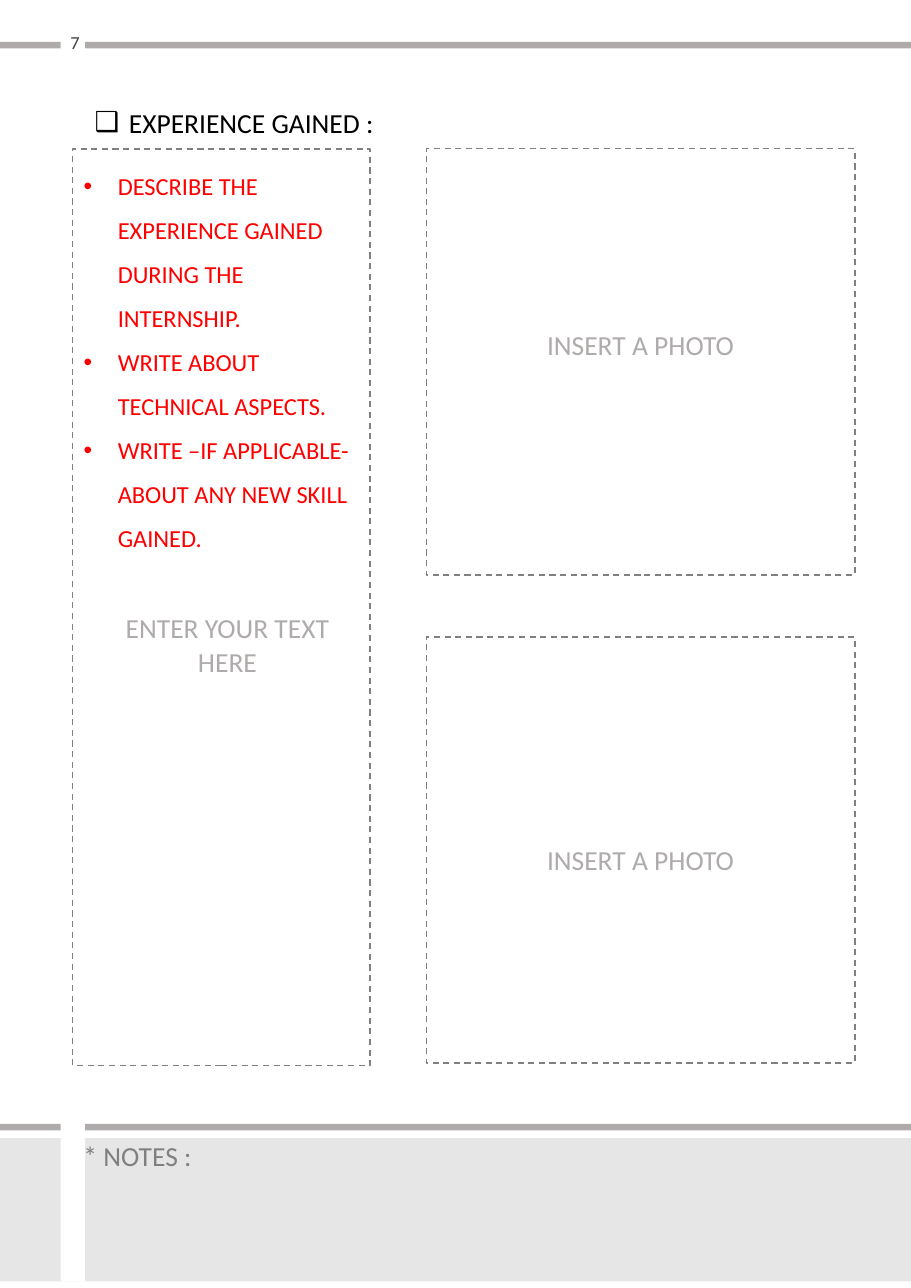
from lxml import etree
from pptx import Presentation
from pptx import util as u
from pptx.dml.color import RGBColor
from pptx.enum import dml, shapes, text
from pptx.oxml import ns

GREY, PALE, DASH = "AFABAB", "E7E6E6", "808080"
PAGE_WIDTH, PAGE_HEIGHT = 8.27, 11.69
INDENT = 0.31


def colour(value):
    return RGBColor.from_string(value)


def place(shape, box):
    for side, length in zip(("left", "top", "width", "height"), box):
        setattr(shape, side, u.Inches(length))


def add_bullet(paragraph, mark):
    properties = paragraph._p.get_or_add_pPr()
    properties.set("marL", str(u.Inches(INDENT)))
    properties.set("indent", str(-u.Inches(INDENT)))
    etree.SubElement(properties, ns.qn("a:buFont")).set("typeface", "Arial")
    etree.SubElement(properties, ns.qn("a:buChar")).set("char", mark)


def write(shape, lines, size, ink, align=text.PP_ALIGN.LEFT, mark=None, spacing=1.0):
    frame = shape.text_frame
    frame_format = {
        "word_wrap": True,
        "auto_size": text.MSO_AUTO_SIZE.SHAPE_TO_FIT_TEXT,
        "vertical_anchor": text.MSO_ANCHOR.TOP,
    }
    paragraph_format = {
        "alignment": align,
        "line_spacing": spacing,
        "space_before": u.Pt(0),
        "space_after": u.Pt(0),
    }
    font_format = {"name": "Calibri", "size": u.Pt(size), "bold": False}
    for name, value in frame_format.items():
        setattr(frame, name, value)
    for index, line in enumerate(lines):
        paragraph = frame.add_paragraph() if index else frame.paragraphs[0]
        if mark:
            add_bullet(paragraph, mark)
        for name, value in paragraph_format.items():
            setattr(paragraph, name, value)
        run = paragraph.add_run()
        run.text = line
        for name, value in font_format.items():
            setattr(run.font, name, value)
        run.font.color.rgb = colour(ink)


def add_label(slide, box, words, size, ink, align=text.PP_ALIGN.CENTER):
    label = slide.shapes.add_textbox(*map(u.Inches, box))
    write(label, [words], size, ink, align)


def add_rectangle(slide, box, fill=None):
    rectangle = slide.shapes.add_shape(
        shapes.MSO_SHAPE.RECTANGLE, *map(u.Inches, box))
    rectangle.shadow.inherit = False
    if fill:
        rectangle.fill.solid()
        rectangle.fill.fore_color.rgb = colour(fill)
        rectangle.line.fill.background()
    else:
        rectangle.fill.background()
        rectangle.line.color.rgb = colour(DASH)
        rectangle.line.width = u.Pt(1)
        rectangle.line.dash_style = dml.MSO_LINE.DASH


def add_page_bands(slide, box):
    left, top, width, height = box
    bands = [(10.2, 0.06, GREY), (10.33, 1.3, PALE), (0.38, 0.06, GREY)]
    for offset, thickness, fill in bands:
        add_rectangle(slide, (left, top + offset, width, thickness), fill)
    add_rectangle(slide, (left + 0.55, top, 0.22, height - 0.06), "FFFFFF")
    add_label(slide, (left + 0.54, top + 0.23, 0.22, 0.3), "7", 12, "404040")
    add_label(slide, (left + 0.66, top + 10.29, 7.2, 0.4), "* NOTES :", 18, DASH,
              text.PP_ALIGN.LEFT)


def add_experience(slide, box):
    left, top, width, height = box
    add_rectangle(slide, box)
    add_label(slide, (left + 0.35, top + 4.15, 2.11, 0.71),
              "ENTER YOUR TEXT HERE", 18, GREY)
    heading, guidance = slide.placeholders
    place(heading, (left + 0.1, top - 0.44, 7.2, 0.4))
    write(heading, ["EXPERIENCE GAINED :"], 18, "000000", mark="❑")
    place(guidance, (left, top + 0.02, width, 4.14))
    write(guidance, [
        "DESCRIBE THE EXPERIENCE GAINED DURING THE INTERNSHIP.",
        "WRITE ABOUT TECHNICAL ASPECTS.",
        "WRITE –IF APPLICABLE- ABOUT ANY NEW SKILL GAINED.",
    ], 16, "FF0000", mark="•", spacing=1.5)
    for placeholder in (heading, guidance):
        slide.shapes.element.append(placeholder.element)


def add_photo_frame(slide, box, label_drop):
    left, top, width, _ = box
    label_width = 2.11
    add_rectangle(slide, box)
    add_label(slide, (left + (width - label_width) / 2, top + label_drop,
                      label_width, 0.4), "INSERT A PHOTO", 18, GREY)


def main():
    report = Presentation()
    report.slide_width = u.Inches(PAGE_WIDTH)
    report.slide_height = u.Inches(PAGE_HEIGHT)
    page = report.slides.add_slide(report.slide_layouts[1])
    add_page_bands(page, (0, 0, PAGE_WIDTH, PAGE_HEIGHT))
    add_experience(page, (0.66, 1.35, 2.7, 8.32))
    for top, label_drop in ((1.35, 1.58), (5.78, 1.82)):
        add_photo_frame(page, (3.87, top, 3.89, 3.87), label_drop)
    report.save("out.pptx")


if __name__ == "__main__":
    main()
